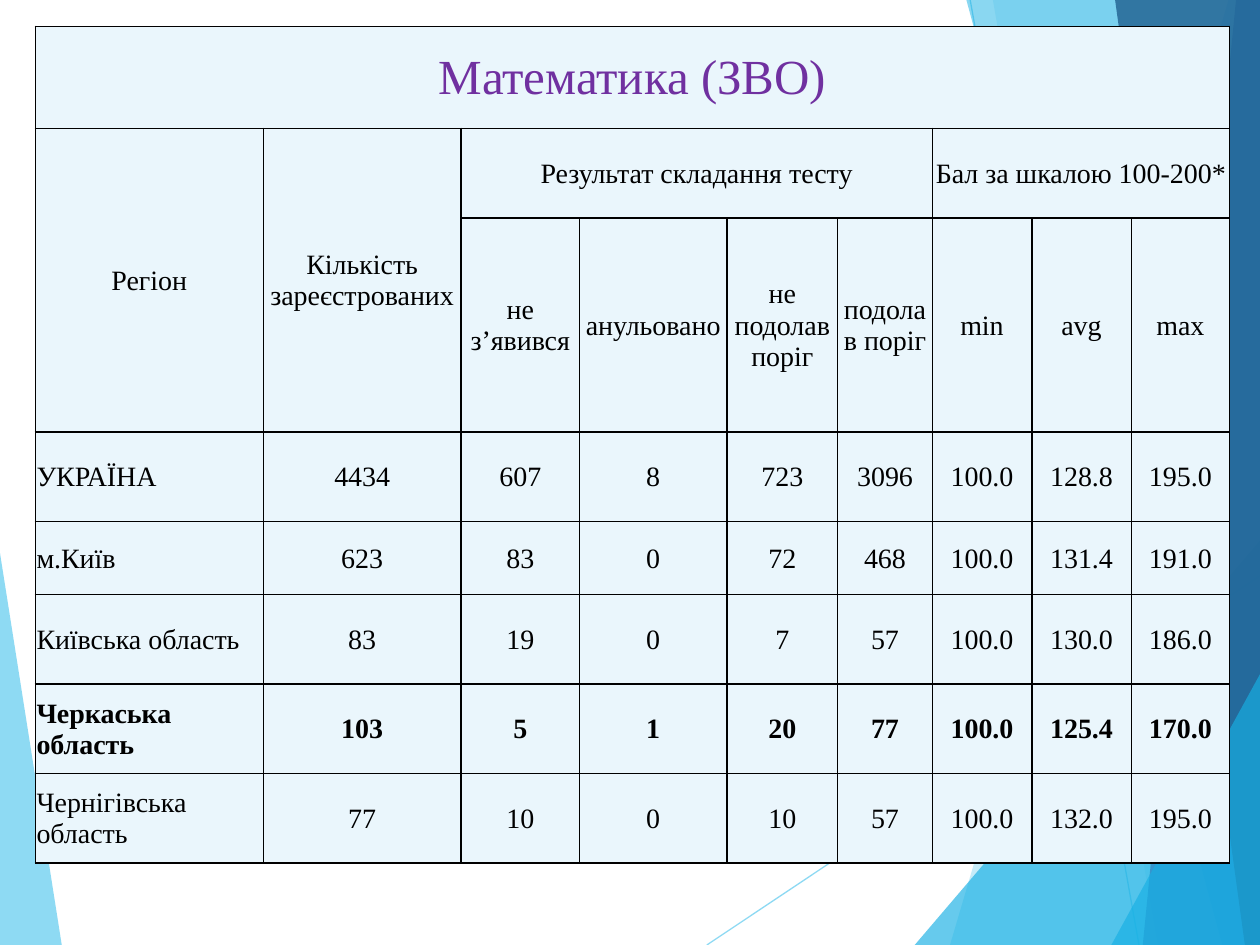
from lxml import etree
from pptx import Presentation
from pptx import util as u
from pptx.dml.color import RGBColor
from pptx.enum import text
from pptx.oxml import ns

Inches, Pt = u.Inches, u.Pt
FONT = "Times New Roman"
COLORS = {"sky": "5FCBEF", "cyan": "17B0E4", "blue": "2E83C3", "navy": "226292",
          "cell": "EAF6FC", "title": "7030A0", "ink": "000000"}
LEFT_FACET = ("sky", 70, [(0, 4.39), (0.49, 7.5), (0, 7.5)])
RAYS = [((5.61, 7.5), (10, 4.57)), ((7.7, 0), (9.04, 7.5))]
RIGHT_FACETS = [
    ("sky", 36, [(9.75, 0), (7.54, 7.5), (10, 7.5), (10, 0)]),
    ("sky", 20, [(7.88, 0), (9.19, 7.5), (10, 7.5), (10, 0)]),
    ("cyan", 66, [(7.26, 7.5), (10, 4.29), (10, 7.5)]),
    ("cyan", 50, [(7.67, 0), (9.7, 7.5), (10, 7.5), (10, 0)]),
    ("blue", 70, [(9.81, 0), (9.07, 7.5), (10, 7.5), (10, 0)]),
    ("navy", 82, [(8.85, 0), (9.88, 7.5), (10, 7.5), (10, 0)]),
    ("cyan", 66, [(8.82, 7.5), (10, 5.35), (10, 7.5)]),
]
COLUMN_WIDTHS = [1.81, 1.57, 0.94, 1.17, 0.88, 0.75, 0.79, 0.79, 0.78]
ROW_HEIGHTS = [0.81, 0.71, 1.7, 0.71, 0.58, 0.71, 0.71, 0.71]
MERGES = [(0, 0, 0, 8), (1, 0, 2, 0), (1, 1, 2, 1), (1, 2, 1, 5), (1, 6, 1, 8)]
HEADINGS = {
    (0, 0): "Математика (ЗВО)",
    (1, 0): "Регіон",
    (1, 1): "Кількість зареєстрованих",
    (1, 2): "Результат складання тесту",
    (1, 6): "Бал за шкалою 100-200*",
    (2, 2): "не з’явився",
    (2, 3): "анульовано",
    (2, 4): "не подолав поріг",
    (2, 5): "подолав поріг",
    (2, 6): "min",
    (2, 7): "avg",
    (2, 8): "max",
}
FIRST_REGION_ROW = 3
BOLD_REGION = "Черкаська область"
REGIONS = [
    ("УКРАЇНА", "4434", "607", "8", "723", "3096", "100.0", "128.8", "195.0"),
    ("м.Київ", "623", "83", "0", "72", "468", "100.0", "131.4", "191.0"),
    ("Київська область", "83", "19", "0", "7", "57", "100.0", "130.0", "186.0"),
    (BOLD_REGION, "103", "5", "1", "20", "77", "100.0", "125.4", "170.0"),
    ("Чернігівська область", "77", "10", "0", "10", "57", "100.0", "132.0", "195.0"),
]


def rgb(name):
    """Return the named colour."""
    return RGBColor.from_string(COLORS[name])


def set_opacity(shape, percent):
    """Set the opacity of the shape's colours."""
    for color in shape._element.spPr.iter(ns.qn("a:srgbClr")):
        etree.SubElement(color, ns.qn("a:alpha"), val=str(percent * 1000))


def add_facet(page, color, opacity, points):
    """Add a translucent polygon."""
    start, *rest = [(Inches(x), Inches(y)) for x, y in points]
    builder = page.shapes.build_freeform(*start)
    builder.add_line_segments(rest, close=True)
    facet = builder.convert_to_shape()
    facet.shadow.inherit = False
    facet.fill.solid()
    facet.fill.fore_color.rgb = rgb(color)
    facet.line.fill.background()
    set_opacity(facet, opacity)


def add_ray(page, start, end):
    """Add a thin translucent line."""
    ray = page.shapes.add_connector(1, *map(Inches, start + end))
    ray.line.color.rgb = rgb("sky")
    ray.line.width = Pt(0.75)
    set_opacity(ray, 70)
    etree.SubElement(ray._element.spPr, ns.qn("a:effectLst"))


def format_cell(cell):
    """Give a cell its borders, fill and margins."""
    properties = cell._tc.get_or_add_tcPr()
    for side in ("lnL", "lnR", "lnT", "lnB"):
        border = etree.SubElement(properties, ns.qn(f"a:{side}"), w=str(Pt(1)))
        fill = etree.SubElement(border, ns.qn("a:solidFill"))
        etree.SubElement(fill, ns.qn("a:srgbClr"), val=COLORS["ink"])
    cell.fill.solid()
    cell.fill.fore_color.rgb = rgb("cell")
    cell.margin_left = cell.margin_right = cell.margin_top = Inches(0.01)
    cell.margin_bottom = 0
    cell.vertical_anchor = text.MSO_ANCHOR.MIDDLE


def write_cell(cell, words, size=16, color="ink", bold=False, centred=True):
    """Write one paragraph into a cell."""
    cell.text = words
    para = cell.text_frame.paragraphs[0]
    para.alignment = text.PP_ALIGN.CENTER if centred else text.PP_ALIGN.LEFT
    para.font.name = FONT
    para.font.size = Pt(size)
    para.font.bold = bold
    para.font.color.rgb = rgb(color)


def add_results_table(page):
    """Add the table of test results by region."""
    frame = page.shapes.add_table(
        len(ROW_HEIGHTS), len(COLUMN_WIDTHS), Inches(0.28), Inches(0.21),
        Inches(sum(COLUMN_WIDTHS)), Inches(sum(ROW_HEIGHTS)))
    table = frame.table
    for column, width in zip(table.columns, COLUMN_WIDTHS):
        column.width = Inches(width)
    for row, height in zip(table.rows, ROW_HEIGHTS):
        row.height = Inches(height)
    for cell in table.iter_cells():
        format_cell(cell)
    for top, left, bottom, right in MERGES:
        table.cell(top, left).merge(table.cell(bottom, right))
    for (row, column), words in HEADINGS.items():
        style = {"size": 28, "color": "title"} if row == 0 else {}
        write_cell(table.cell(row, column), words, **style)
    for row, region in enumerate(REGIONS, FIRST_REGION_ROW):
        for column, words in enumerate(region):
            write_cell(table.cell(row, column), words,
                       bold=region[0] == BOLD_REGION, centred=column > 0)


def main():
    """Build the slide and save it."""
    deck = Presentation()
    deck.slide_width, deck.slide_height = Inches(10), Inches(7.5)
    page = deck.slides.add_slide(deck.slide_layouts[6])
    add_facet(page, *LEFT_FACET)
    for start, end in RAYS:
        add_ray(page, start, end)
    for facet in RIGHT_FACETS:
        add_facet(page, *facet)
    add_results_table(page)
    deck.save("out.pptx")


if __name__ == "__main__":
    main()
